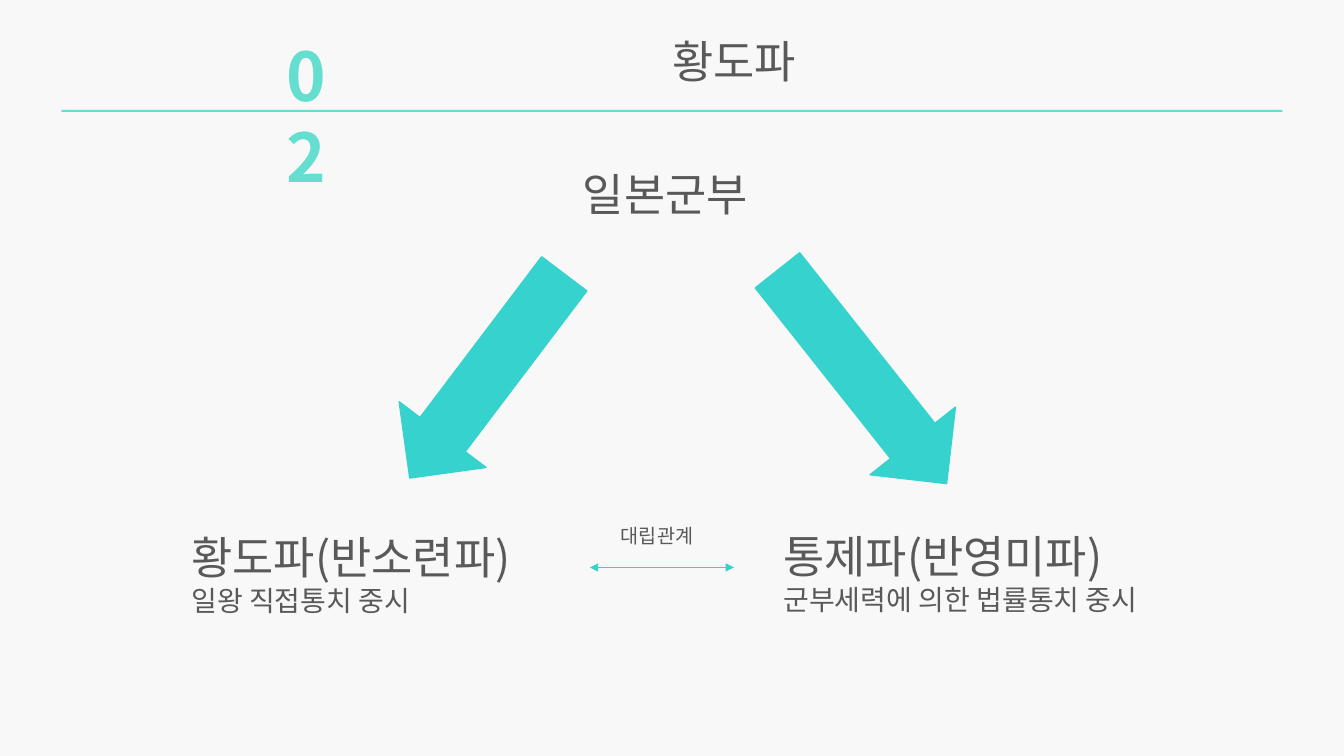
from pptx import Presentation
from pptx.dml.color import RGBColor
from pptx.enum.shapes import MSO_CONNECTOR, MSO_SHAPE
from pptx.enum.text import MSO_AUTO_SIZE, PP_ALIGN
from pptx.oxml.ns import qn
from pptx.util import Inches, Pt
from lxml import etree

FONT = "Noto Sans CJK KR"
COLORS = {"background": "F8F8F8", "text": "595959", "mint": "64DECF", "teal": "36D2CE"}

# box (left, top, width, height), lines of (text, size), centred, wrapped
LABELS = [
    ((5.6, 1.6, 2, 0.64), [("일본군부", 32)], True, False),
    ((4.23, 0.29, 6.1, 0.64), [("황도파", 32)], True, True),
    ((1.8, 5.21, 3.8, 0.98), [("황도파(반소련파)", 32), ("일왕 직접통치 중시", 20)], False, True),
    ((7.67, 5.2, 4.15, 0.98), [("통제파(반영미파)", 32), ("군부세력에 의한 법률통치 중시", 20)], False, True),
    ((6.06, 5.15, 1.01, 0.34), [("대립관계", 14)], False, True),
]
NUMBER = ((2.74, 0.29, 0.9, 0.91), [("02", 48)])
RULE = (0.61, 1.09, 12.11, 0.02)
ARROWS = [((4.29, 2.46, 1.08, 2.54), 37.1), ((8.01, 2.39, 1.08, 2.7), 321.6)]
RIVALRY = (5.85, 5.63, 7.28, 5.63)


def rgb(name):
    return RGBColor.from_string(COLORS[name])


def add_label(slide, box, lines, centred=False, wrap=True, color="text", bold=False):
    tf = slide.shapes.add_textbox(*map(Inches, box)).text_frame
    tf.word_wrap = wrap
    tf.auto_size = MSO_AUTO_SIZE.SHAPE_TO_FIT_TEXT
    tf.text = "\n".join(text for text, _ in lines)
    for p, (_, size) in zip(tf.paragraphs, lines):
        p.alignment = PP_ALIGN.CENTER if centred else PP_ALIGN.LEFT
        font = p.runs[0].font
        font.name, font.size, font.bold = FONT, Pt(size), bold
        font.color.rgb = rgb(color)
        etree.SubElement(font._element, qn("a:ea")).set("typeface", FONT)


def add_solid(slide, kind, box, color):
    sp = slide.shapes.add_shape(kind, *map(Inches, box))
    sp.shadow.inherit = False
    sp.fill.solid()
    sp.fill.fore_color.rgb = rgb(color)
    sp.line.fill.background()
    return sp


def add_double_arrow(slide, ends):
    line = slide.shapes.add_connector(MSO_CONNECTOR.STRAIGHT, *map(Inches, ends))
    line.line.color.rgb = rgb("teal")
    line.line.width = Pt(0.5)
    for tag in ("a:headEnd", "a:tailEnd"):
        etree.SubElement(line.line._get_or_add_ln(), qn(tag)).set("type", "triangle")
    etree.SubElement(line._element.spPr, qn("a:effectLst"))


def main():
    prs = Presentation()
    prs.slide_width, prs.slide_height = Inches(13.33), Inches(7.5)
    slide = prs.slides.add_slide(prs.slide_layouts[6])
    slide.background.fill.solid()
    slide.background.fill.fore_color.rgb = rgb("background")

    add_solid(slide, MSO_SHAPE.RECTANGLE, RULE, "mint")
    add_label(slide, *NUMBER, color="mint", bold=True)
    for label in LABELS:
        add_label(slide, *label)
    for box, angle in ARROWS:
        arrow = add_solid(slide, MSO_SHAPE.DOWN_ARROW, box, "teal")
        arrow.adjustments[0], arrow.adjustments[1] = 0.52, 0.5
        arrow.rotation = angle
        arrow.line.color.rgb = rgb("teal")
        arrow.line.width = Pt(1)
    add_double_arrow(slide, RIVALRY)
    prs.save("out.pptx")


if __name__ == "__main__":
    main()
